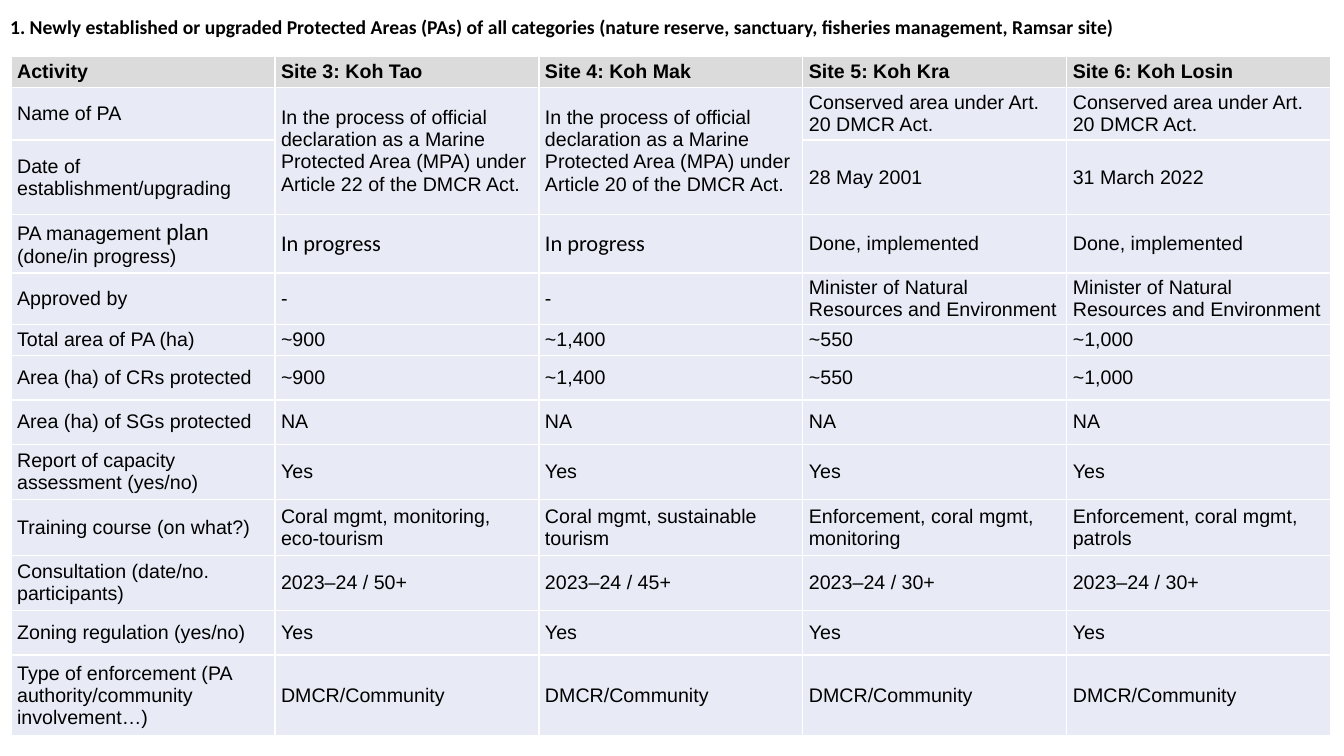
from dataclasses import dataclass

from lxml.etree import SubElement
from pptx import Presentation
from pptx.dml.color import RGBColor
from pptx.enum.text import MSO_ANCHOR, MSO_AUTO_SIZE, PP_ALIGN
from pptx.oxml.ns import qn
from pptx.slide import Slide
from pptx.table import _Cell
from pptx.text.text import _Paragraph
from pptx.util import Inches, Pt

BLACK = RGBColor(0x00, 0x00, 0x00)
WHITE = RGBColor(0xFF, 0xFF, 0xFF)
HEADER_GREY = RGBColor(0xDB, 0xDB, 0xDB)
BODY_BLUE = RGBColor(0xE8, 0xEB, 0xF5)

SLIDE_WIDTH, SLIDE_HEIGHT = Inches(13.33), Inches(7.5)
TABLE_LEFT, TABLE_TOP, TABLE_WIDTH = Inches(0.11), Inches(0.56), Inches(13.09)
SIDE_INSET, END_INSET = Inches(0.06), Inches(0.03)
TITLE = (
    "1. Newly established or upgraded Protected Areas (PAs) of all categories "
    "(nature reserve, sanctuary, fisheries management, Ramsar site)"
)


@dataclass(frozen=True)
class Span:
    """A stretch of text in one font."""

    text: str
    size: int = 14
    font: str = "Arial"
    bold: bool = False


@dataclass(frozen=True)
class Row:
    """A table row: its height in inches, its label and its site values, None where merged upwards."""

    height: float
    label: str | tuple[Span, ...]
    sites: tuple[str | Span | None, ...]


IN_PROGRESS = Span("In progress", 16, "Calibri")
PLAN_LABEL = (Span("PA management "), Span("plan", 16), Span(" (done/in progress)"))
DECLARATION = (
    "In the process of official declaration as a Marine Protected Area (MPA) "
    "under Article {} of the DMCR Act."
)
CONSERVED = "Conserved area under Art. 20 DMCR Act."
MINISTER = "Minister of Natural Resources and Environment"
AREAS = ("~900", "~1,400", "~550", "~1,000")
ALL_YES = ("Yes",) * 4

ROWS = (
    Row(0.31, "Activity", ("Site 3: Koh Tao", "Site 4: Koh Mak", "Site 5: Koh Kra", "Site 6: Koh Losin")),
    Row(0.52, "Name of PA", (DECLARATION.format(22), DECLARATION.format(20), CONSERVED, CONSERVED)),
    Row(0.74, "Date of establishment/upgrading", (None, None, "28 May 2001", "31 March 2022")),
    Row(0.58, PLAN_LABEL, (IN_PROGRESS, IN_PROGRESS, "Done, implemented", "Done, implemented")),
    Row(0.51, "Approved by", ("-", "-", MINISTER, MINISTER)),
    Row(0.31, "Total area of PA (ha)", AREAS),
    Row(0.44, "Area (ha) of CRs protected", AREAS),
    Row(0.44, "Area (ha) of SGs protected", ("NA",) * 4),
    Row(0.55, "Report of capacity assessment (yes/no)", ALL_YES),
    Row(
        0.55,
        "Training course (on what?)",
        (
            "Coral mgmt, monitoring, eco-tourism",
            "Coral mgmt, sustainable tourism",
            "Enforcement, coral mgmt, monitoring",
            "Enforcement, coral mgmt, patrols",
        ),
    ),
    Row(
        0.55,
        "Consultation (date/no. participants)",
        ("2023–24 / 50+", "2023–24 / 45+", "2023–24 / 30+", "2023–24 / 30+"),
    ),
    Row(0.44, "Zoning regulation (yes/no)", ALL_YES),
    Row(0.8, "Type of enforcement (PA authority/community involvement…)", ("DMCR/Community",) * 4),
)


def add_span(para: _Paragraph, span: Span) -> None:
    """Add one formatted run to a paragraph."""
    run = para.add_run()
    run.text = span.text
    run.font.size = Pt(span.size)
    run.font.name = span.font
    run.font.bold = span.bold
    run.font.color.rgb = BLACK


def set_borders(cell: _Cell) -> None:
    """Give a cell thin white lines on all four sides."""
    properties = cell._tc.get_or_add_tcPr()
    for index, side in enumerate(("a:lnL", "a:lnR", "a:lnT", "a:lnB")):
        line = SubElement(properties, qn(side), w=str(Pt(1)))
        fill = SubElement(line, qn("a:solidFill"))
        SubElement(fill, qn("a:srgbClr"), val=str(WHITE))
        properties.insert(index, line)


def fill_cell(cell: _Cell, content: str | Span | tuple[Span, ...], header: bool) -> None:
    """Format a cell and write its text."""
    cell.margin_left = cell.margin_right = SIDE_INSET
    cell.margin_top = cell.margin_bottom = END_INSET
    cell.vertical_anchor = MSO_ANCHOR.MIDDLE
    cell.fill.solid()
    cell.fill.fore_color.rgb = HEADER_GREY if header else BODY_BLUE
    set_borders(cell)
    if isinstance(content, str):
        content = Span(content, bold=header)
    spans = content if isinstance(content, tuple) else (content,)
    for span in spans:
        add_span(cell.text_frame.paragraphs[0], span)


def add_site_table(page: Slide) -> None:
    """Add the table that compares the protected areas."""
    columns = 1 + len(ROWS[0].sites)
    height = Inches(sum(row.height for row in ROWS))
    table = page.shapes.add_table(
        len(ROWS), columns, TABLE_LEFT, TABLE_TOP, TABLE_WIDTH, height
    ).table
    table.horz_banding = False
    for row_index, row in enumerate(ROWS):
        table.rows[row_index].height = Inches(row.height)
        for column_index, content in enumerate((row.label, *row.sites)):
            cell = table.cell(row_index, column_index)
            if content is None:
                table.cell(row_index - 1, column_index).merge(cell)
            else:
                fill_cell(cell, content, row_index == 0)


def add_title(page: Slide) -> None:
    """Write the heading in the band above the table."""
    title = page.shapes.title
    title.left, title.top = 0, 0
    title.width, title.height = int(SLIDE_WIDTH * 0.85), int(SLIDE_HEIGHT * 0.07)
    box = title.text_frame
    box.word_wrap = True
    box.auto_size = MSO_AUTO_SIZE.NONE
    box.vertical_anchor = MSO_ANCHOR.MIDDLE
    para = box.paragraphs[0]
    para.alignment = PP_ALIGN.LEFT
    add_span(para, Span(TITLE, font="Calibri", bold=True))


def main() -> None:
    """Build the slide and save the deck."""
    deck = Presentation()
    deck.slide_width, deck.slide_height = SLIDE_WIDTH, SLIDE_HEIGHT
    page = deck.slides.add_slide(deck.slide_layouts[5])
    add_title(page)
    add_site_table(page)
    deck.save("out.pptx")


if __name__ == "__main__":
    main()
